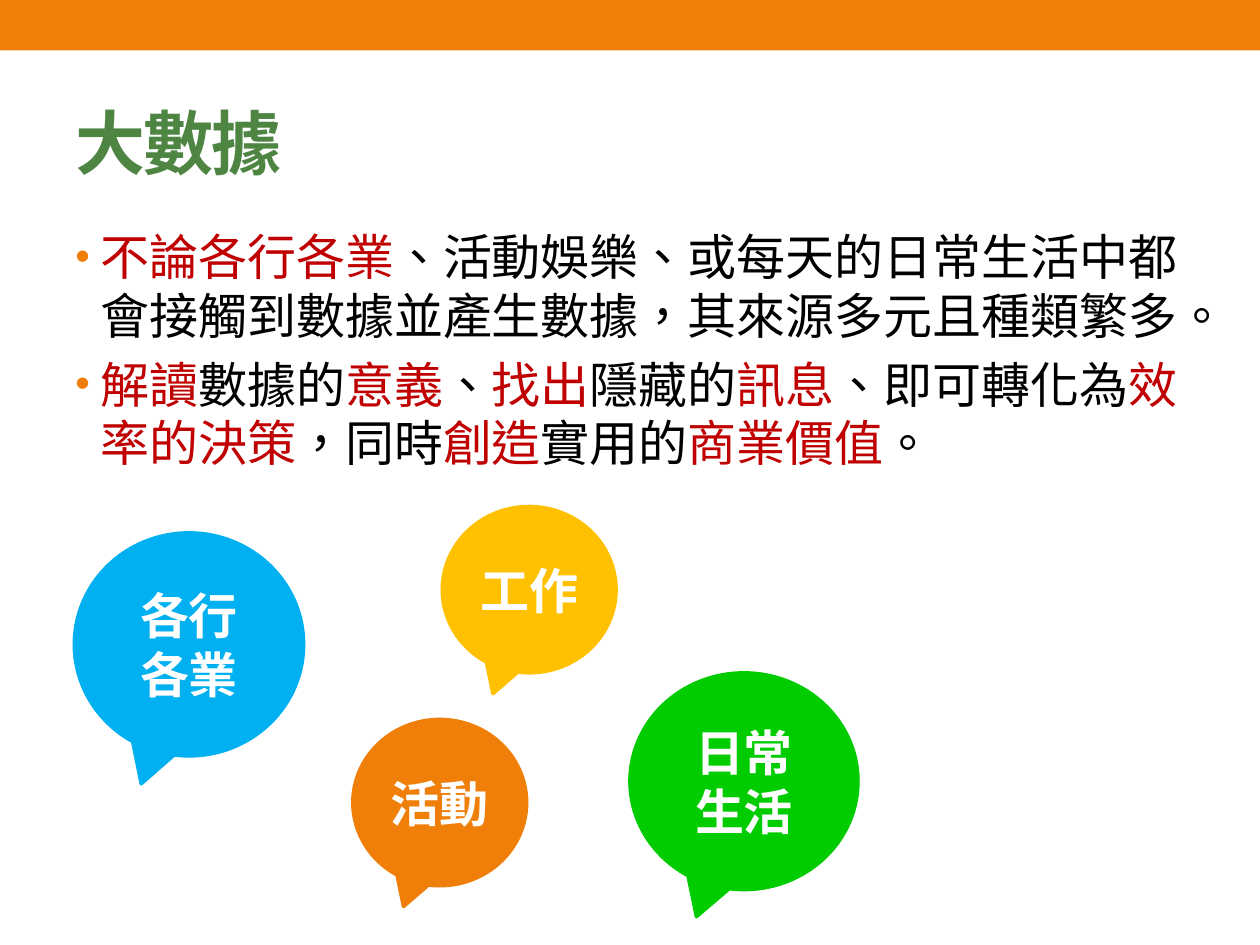
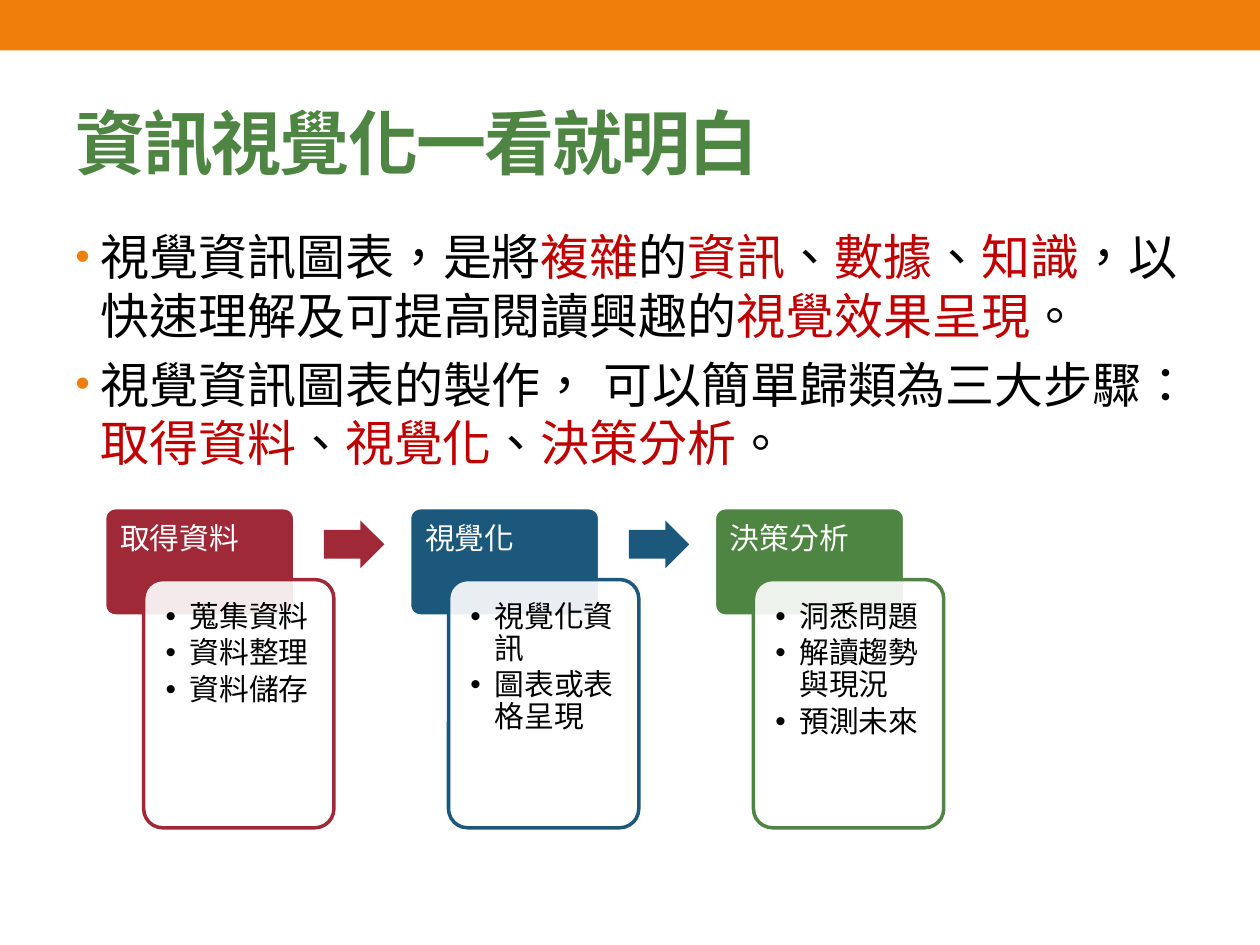
from lxml import etree
from pptx import Presentation
from pptx.dml.color import RGBColor
from pptx.enum import shapes, text
from pptx.oxml import ns
from pptx.util import Inches, Pt

FONT = "Arial"
HUES = {
    "orange": "F07F09", "green": "4E8542", "red": "C00000", "black": "000000",
    "white": "FFFFFF", "sky": "00B0F0", "lime": "00CC00", "gold": "FFC000",
    "wine": "9F2936", "navy": "1B587C",
}
KIND = shapes.MSO_SHAPE


def draw(slide, kind, box, fill, line=None):
    form = slide.shapes.add_shape(kind, *map(Inches, box))
    form.shadow.inherit = False
    form.fill.solid()
    form.fill.fore_color.rgb = RGBColor.from_string(HUES[fill])
    if line:
        form.line.color.rgb = RGBColor.from_string(HUES[line])
        form.line.width = Pt(2)
    else:
        form.line.fill.background()
    return form


def write(frame, lines, size, hue, bold=False, align="LEFT", dent=0, dot=None):
    """Fill the frame; parts between asterisks turn red, dot is the bullet colour."""
    frame.word_wrap = True
    for i, line in enumerate(lines):
        para = frame.add_paragraph() if i else frame.paragraphs[0]
        para.alignment = getattr(text.PP_ALIGN, align)
        for j, part in enumerate(line.split("*")):
            if not part:
                continue
            run = para.add_run()
            run.text = part
            run.font.size, run.font.bold, run.font.name = Pt(size), bold, FONT
            run.font.color.rgb = RGBColor.from_string(HUES["red" if j % 2 else hue])
            props = run.font._element
            props.set("lang", "zh-TW")
            props.find(ns.qn("a:latin")).addnext(
                props.makeelement(ns.qn("a:ea"), {"typeface": FONT}))
        if dot:
            props = para._p.get_or_add_pPr()
            props.set("marL", str(Inches(dent)))
            props.set("indent", str(-Inches(dent)))
            tint = etree.SubElement(props, ns.qn("a:buClr"))
            etree.SubElement(tint, ns.qn("a:srgbClr"), val=HUES[dot])
            scale = "85000" if dot == "orange" else "100000"
            etree.SubElement(props, ns.qn("a:buSzPct"), val=scale)
            etree.SubElement(props, ns.qn("a:buFont"), typeface=FONT)
            etree.SubElement(props, ns.qn("a:buChar"), char="•")


deck = Presentation()
deck.slide_width, deck.slide_height = Inches(10), Inches(7.5)

# Band, title and bullets of each slide
pages = [
    ("大數據", 9, [
        "*不論各行各業*、活動娛樂、或每天的日常生活中都會接觸到數據並產生數據，其來源多元且種類繁多。",
        "*解讀*數據的*意義*、*找出*隱藏的*訊息*、即可轉化為*效率的決策*，同時*創造*實用的*商業價值*。",
    ]),
    ("資訊視覺化一看就明白", 9.07, [
        "視覺資訊圖表，是將*複雜*的*資訊*、*數據*、*知識*，以快速理解及可提高閱讀興趣的*視覺效果呈現*。",
        "視覺資訊圖表的製作， 可以簡單歸類為三大步驟：*取得資料*、*視覺化*、*決策分析*。",
    ]),
]
for name, wide, points in pages:
    slide = deck.slides.add_slide(deck.slide_layouts[6])
    draw(slide, KIND.RECTANGLE, (0, 0, 10, 0.4), "orange")

    title = slide.shapes.add_textbox(*map(Inches, (0.5, 0.58, 9, 1.08))).text_frame
    title.vertical_anchor = text.MSO_ANCHOR.MIDDLE
    write(title, [name], 40, "green", bold=True)
    title.paragraphs[0].runs[0].font._element.set("spc", "-100")

    body = slide.shapes.add_textbox(*map(Inches, (0.5, 1.75, wide, 5.33))).text_frame
    write(body, points, 28, "black", dent=0.2, dot="orange")
    for para in body.paragraphs:
        para.space_before = Pt(5.6)

data, steps = deck.slides

# Speech bubbles: where data comes from
bubbles = [
    ("各行各業", "sky", (0.59, 4.23, 1.82, 1.77)),
    ("活動", "orange", (2.8, 5.71, 1.38, 1.32)),
    ("日常生活", "lime", (5, 5.34, 1.81, 1.72)),
    ("工作", "gold", (3.51, 4.02, 1.38, 1.32)),
]
for word, hue, box in bubbles:
    frame = draw(data, KIND.OVAL_CALLOUT, box, hue, hue).text_frame
    frame.margin_left = frame.margin_right = Inches(0.09)
    frame.vertical_anchor = text.MSO_ANCHOR.MIDDLE
    write(frame, [word], 28, "white", bold=True, align="CENTER")

# Three steps: a head, a card over it, and an arrow to the next step
stages = [
    ("取得資料", "wine", ["蒐集資料", "資料整理", "資料儲存"]),
    ("視覺化", "navy", ["視覺化資訊", "圖表或表格呈現"]),
    ("決策分析", "green", ["洞悉問題", "解讀趨勢與現況", "預測未來"]),
]
for i, (name, hue, tasks) in enumerate(stages):
    left = 0.83 + 2.42 * i
    head = draw(steps, KIND.ROUNDED_RECTANGLE, (left, 4.03, 1.51, 0.86), hue, "white")
    card = draw(steps, KIND.ROUNDED_RECTANGLE, (left + 0.31, 4.6, 1.51, 1.97), "white", hue)
    tint = card.fill._xPr.find(ns.qn("a:solidFill"))[0]
    etree.SubElement(tint, ns.qn("a:alpha"), val="90000")

    write(head.text_frame, [name], 17, "white")
    write(card.text_frame, tasks, 17, "black", dent=0.19, dot="black")
    for form, inset in ((head, 0.1), (card, 0.13)):
        form.adjustments[0] = 0.1
        frame = form.text_frame
        frame.vertical_anchor = text.MSO_ANCHOR.TOP
        frame.margin_left = frame.margin_right = frame.margin_top = Inches(inset)
        for para in frame.paragraphs:
            para.line_spacing = 0.9
            para.space_after = Pt(2.5)

    if i < len(stages) - 1:
        arrow = draw(steps, KIND.RIGHT_ARROW, (left + 1.74, 4.13, 0.48, 0.38), hue)
        arrow.adjustments[0] = 0.6

deck.save("out.pptx")
